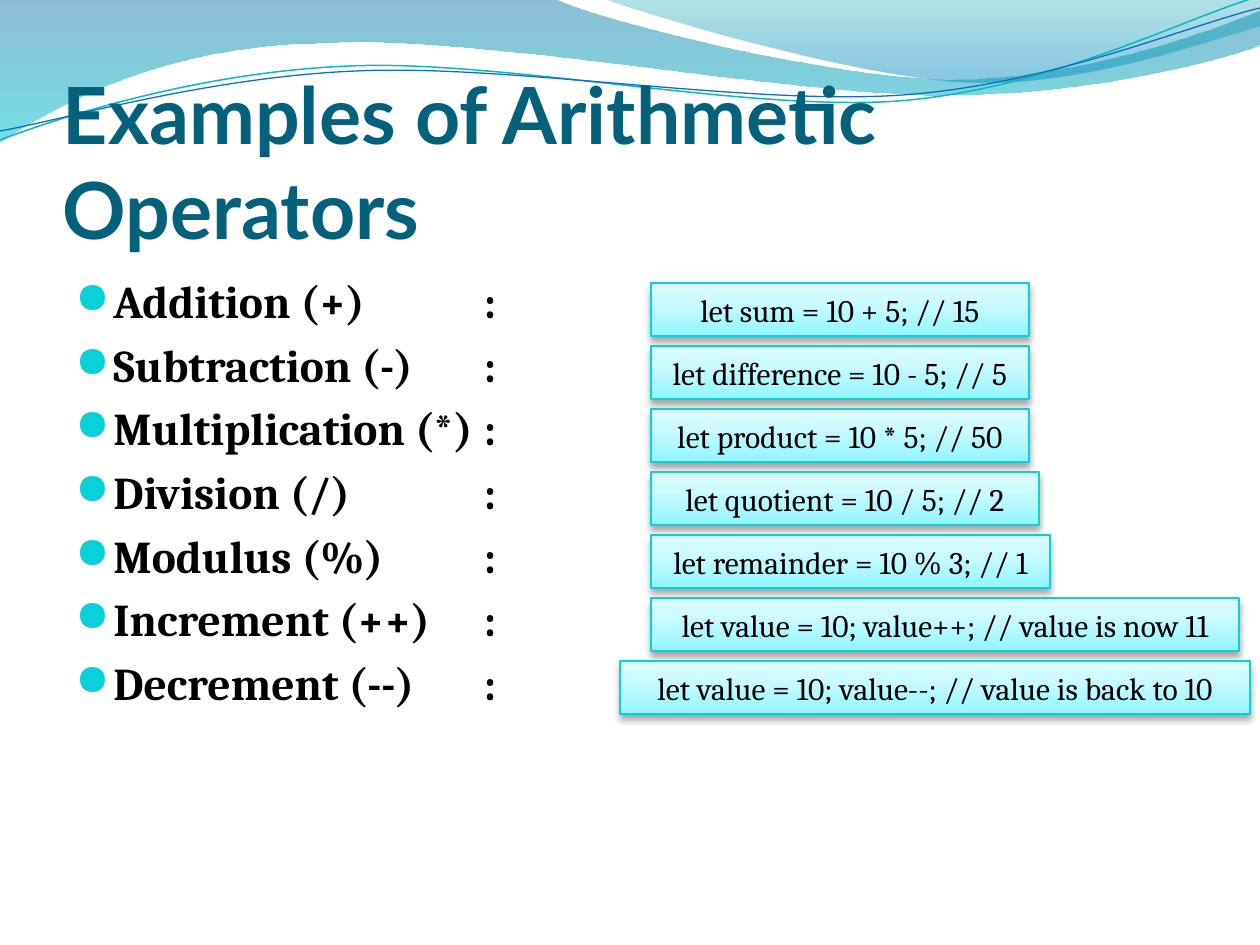
from dataclasses import dataclass

from lxml.etree import SubElement
from pptx import Presentation
from pptx.dml.color import RGBColor
from pptx.enum.shapes import MSO_SHAPE
from pptx.enum.text import MSO_ANCHOR, PP_ALIGN
from pptx.oxml import parse_xml
from pptx.oxml.ns import nsdecls, qn
from pptx.util import Emu, Pt

SCALE = 914400 / 126

BLACK = RGBColor(0x00, 0x00, 0x00)
NAVY = RGBColor(0x04, 0x61, 0x7B)
CYAN = RGBColor(0x0B, 0xD0, 0xD9)
TEAL = RGBColor(0x0A, 0xB8, 0xBF)
BLUE = RGBColor(0x0F, 0x6F, 0xC6)
DEEP = RGBColor(0x00, 0x74, 0xA1)
AQUA = RGBColor(0x00, 0xC6, 0xCF)
SEA = RGBColor(0x00, 0xA1, 0xA9)
SKY = RGBColor(0x00, 0x8B, 0xBF)
ICE = RGBColor(0x91, 0xF6, 0xFF)
PALE = RGBColor(0xCC, 0xFB, 0xFF)
MIST = RGBColor(0xDC, 0xFC, 0xFF)

TITLE = {"name": "Lato", "size": Pt(45), "bold": True}
ITEM = {"name": "Cambria", "size": Pt(26), "bold": True}
CODE = {"name": "Cambria", "size": Pt(18), "bold": False}


@dataclass
class Stop:
    pos: int
    color: RGBColor
    alpha: int = 100


@dataclass
class Curve:
    """A start point, then steps: two numbers for a line, six for a Bezier."""
    start: tuple
    steps: list


@dataclass
class Wave:
    curve: Curve
    stops: list


@dataclass
class Thread:
    curve: Curve
    color: RGBColor
    width: float


@dataclass
class Row:
    label: str
    code: str
    width: int
    left: int = 651


WAVES = [
    Wave(Curve((0, 0), [
        (555, -1), (600, 21, 837, 79, 955, 79), (1075, 79, 1207, 33, 1260, 11),
        (1261, 45), (1239, 55, 1096, 96, 940, 95), (784, 95, 481, 35, 324, 43),
        (163, 45, 58, 105, -1, 142)]),
        [Stop(0, DEEP, 45), Stop(100, AQUA, 55)]),
    Wave(Curve((604, -1), [
        (641, 14, 859, 78, 969, 82), (1079, 87, 1211, 40, 1260, 26), (1260, 0)]),
        [Stop(0, SEA, 30), Stop(80, SKY, 45)]),
]
THREADS = [
    Thread(Curve((0, 140), [
        (60, 117, 199, 72, 349, 66), (498, 59, 747, 112, 898, 101),
        (1050, 89, 1182, 19, 1257, -3)]), TEAL, 0.85),
    Thread(Curve((0, 131), [
        (59, 121, 207, 77, 357, 71), (508, 64, 752, 106, 903, 95),
        (1053, 84, 1186, 26, 1260, 8)]), BLUE, 0.75),
]
ROWS = [
    Row("Addition (+)", "let sum = 10 + 5; // 15", 378),
    Row("Subtraction (-)", "let difference = 10 - 5; // 5", 378),
    Row("Multiplication (*)", "let product = 10 * 5; // 50", 378),
    Row("Division (/)", "let quotient = 10 / 5; // 2", 388),
    Row("Modulus (%)", "let remainder = 10 % 3; // 1", 399),
    Row("Increment (++)", "let value = 10; value++; // value is now 11", 588),
    Row("Decrement (--)", "let value = 10; value--; // value is back to 10", 630, 620),
]
ROW_TOP, ROW_GAP, ROW_HIGH = 283, 63, 53
GLASS = [Stop(0, ICE), Stop(65, PALE), Stop(100, MIST)]


def px(n: float) -> Emu:
    return Emu(round(n * SCALE))


def style(font, form: dict, color: RGBColor) -> None:
    for key, value in form.items():
        setattr(font, key, value)
    font.color.rgb = color


def draw(shapes, curve: Curve, close: bool):
    """Lay out all points as lines, then join each Bezier's three into one."""
    dots = [step[i:i + 2] for step in curve.steps for i in range(0, len(step), 2)]
    pen = shapes.build_freeform(*curve.start, scale=SCALE)
    pen.add_line_segments(dots, close=close)
    shape = pen.convert_to_shape()
    shape.shadow.inherit = False
    lines = iter(list(shape._element.iter(qn("a:lnTo"))))
    for step in curve.steps:
        head = next(lines)
        if len(step) == 2:
            continue
        bend = parse_xml(f'<a:cubicBezTo {nsdecls("a")}/>')
        head.addprevious(bend)
        for line in (head, next(lines), next(lines)):
            bend.append(line[0])
            line.getparent().remove(line)
    return shape


def shade(shape, stops: list, angle: int) -> None:
    """Fill the shape with a linear gradient."""
    shape.fill.gradient()
    grad = shape._element.spPr.find(qn("a:gradFill"))
    grad.find(qn("a:lin")).set("ang", str(angle * 60000))
    row = grad.find(qn("a:gsLst"))
    for old in list(row):
        row.remove(old)
    for stop in stops:
        gs = SubElement(row, qn("a:gs"), pos=str(stop.pos * 1000))
        tint = SubElement(gs, qn("a:srgbClr"), val=str(stop.color))
        if stop.alpha < 100:
            SubElement(tint, qn("a:alpha"), val=str(stop.alpha * 1000))


def add_wave(shapes, wave: Wave) -> None:
    shape = draw(shapes, wave.curve, True)
    shade(shape, wave.stops, 90)
    shape.line.fill.background()


def add_thread(shapes, item: Thread) -> None:
    shape = draw(shapes, item.curve, False)
    shape.fill.background()
    shape.line.color.rgb = item.color
    shape.line.width = Pt(item.width)


def add_title(shapes, text: str) -> None:
    frame = shapes.add_textbox(px(63), px(97), px(1134), px(158)).text_frame
    form = {"word_wrap": True, "vertical_anchor": MSO_ANCHOR.BOTTOM,
            "margin_left": 0, "margin_right": 0, "margin_bottom": 0}
    for key, value in form.items():
        setattr(frame, key, value)
    run = frame.paragraphs[0].add_run()
    run.text = text
    style(run.font, TITLE, NAVY)


def add_bullet(para) -> None:
    """Set the bullet, indent, spacing and colon tab of a paragraph."""
    props = para._p.get_or_add_pPr()
    props.set("marL", str(px(38)))
    props.set("indent", str(px(-38)))
    for xml in (
        '<a:spcBef {}><a:spcPct val="20000"/></a:spcBef>',
        f'<a:buClr {{}}><a:srgbClr val="{CYAN}"/></a:buClr>',
        '<a:buSzPct {} val="95000"/>',
        '<a:buFont {} typeface="OpenSymbol"/>',
        '<a:buChar {} char="●"/>',
        f'<a:tabLst {{}}><a:tab pos="{px(408)}" algn="l"/></a:tabLst>',
    ):
        props.append(parse_xml(xml.format(nsdecls("a"))))


def add_list(shapes, rows: list) -> None:
    frame = shapes.add_textbox(px(63), px(267), px(1134), px(605)).text_frame
    frame.word_wrap = True
    for i, row in enumerate(rows):
        para = frame.add_paragraph() if i else frame.paragraphs[0]
        add_bullet(para)
        run = para.add_run()
        run.text = f"{row.label}\t:"
        style(run.font, ITEM, BLACK)


def add_code(shapes, row: Row, top: int) -> None:
    box = shapes.add_shape(MSO_SHAPE.RECTANGLE, px(row.left), px(top),
                           px(row.width), px(ROW_HIGH))
    shade(box, GLASS, 270)
    box.line.color.rgb = CYAN
    box.line.width = Pt(0.75)
    box.shadow.inherit = False
    cast = SubElement(box._element.spPr.find(qn("a:effectLst")), qn("a:outerShdw"),
                      blurRad=str(Pt(4)), dist=str(Pt(3)), dir="5400000", rotWithShape="0")
    tint = SubElement(cast, qn("a:srgbClr"), val=str(BLACK))
    SubElement(tint, qn("a:alpha"), val="35000")
    frame = box.text_frame
    frame.vertical_anchor = MSO_ANCHOR.MIDDLE
    frame.text = row.code
    para = frame.paragraphs[0]
    para.alignment = PP_ALIGN.CENTER
    style(para.runs[0].font, CODE, BLACK)


def main() -> None:
    deck = Presentation()
    deck.slide_width, deck.slide_height = px(1260), px(945)
    shapes = deck.slides.add_slide(deck.slide_layouts[6]).shapes
    for wave in WAVES:
        add_wave(shapes, wave)
    for item in THREADS:
        add_thread(shapes, item)
    add_title(shapes, "Examples of Arithmetic Operators")
    add_list(shapes, ROWS)
    for i, row in enumerate(ROWS):
        add_code(shapes, row, ROW_TOP + i * ROW_GAP)
    deck.save("out.pptx")


if __name__ == "__main__":
    main()
